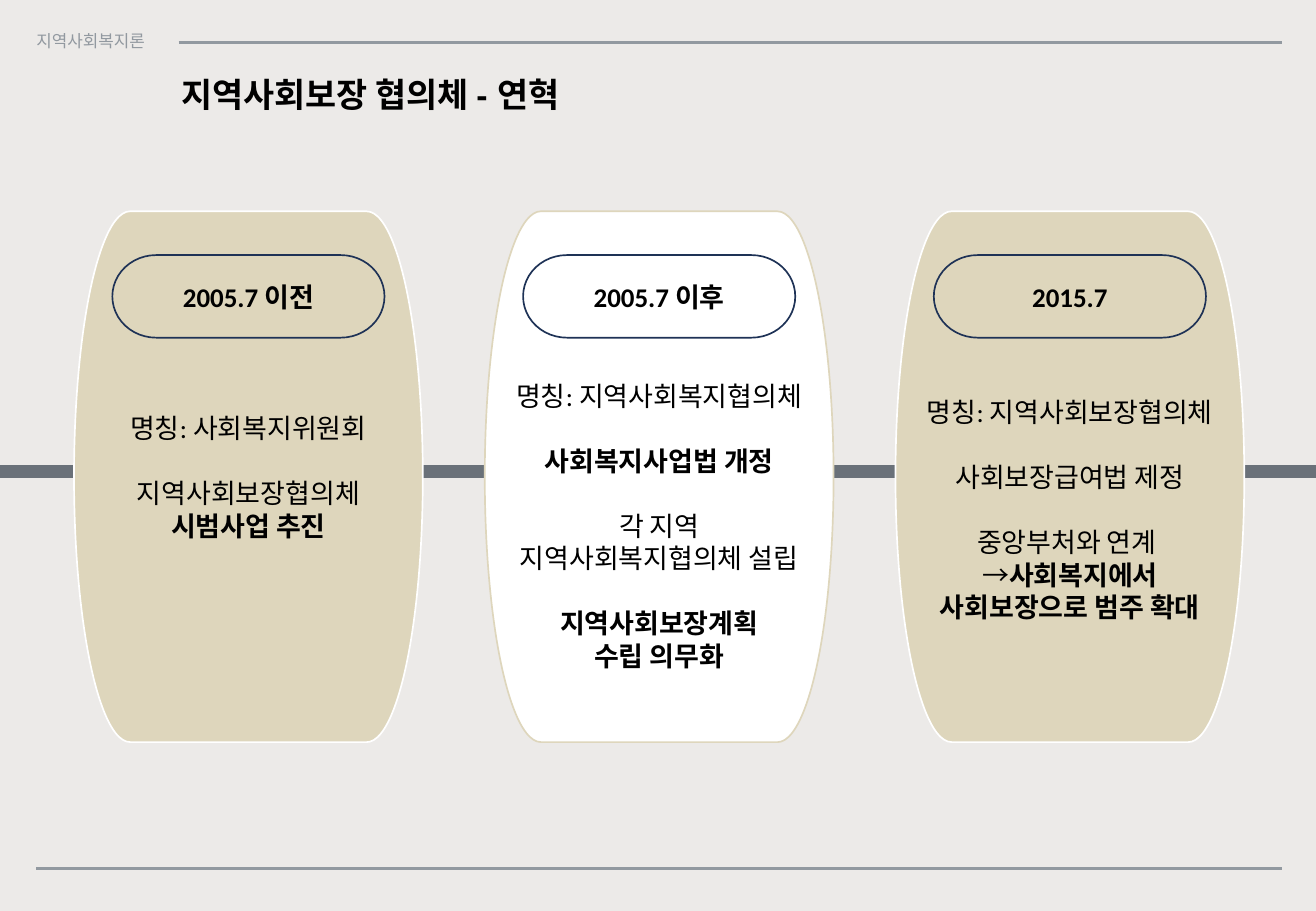
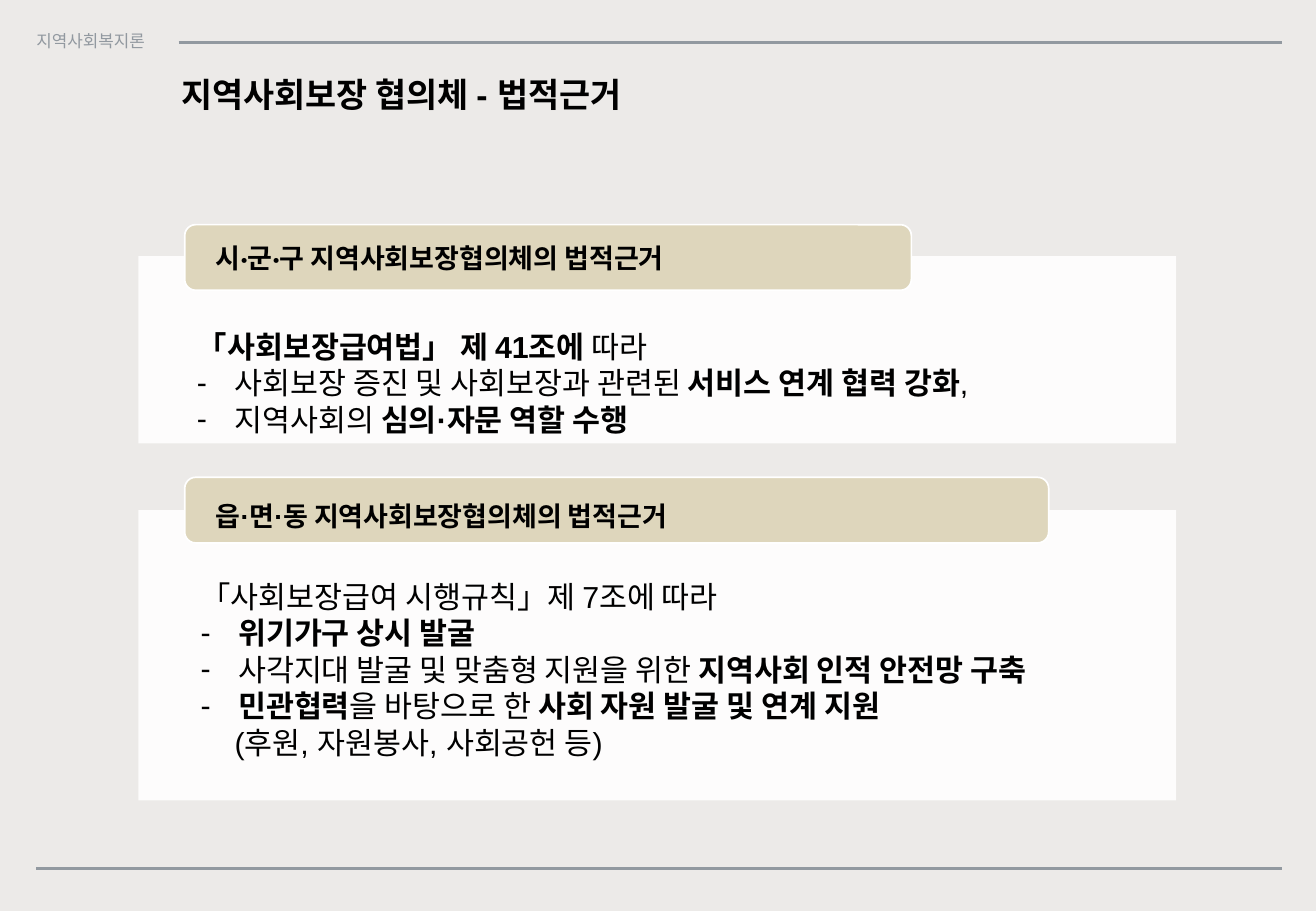
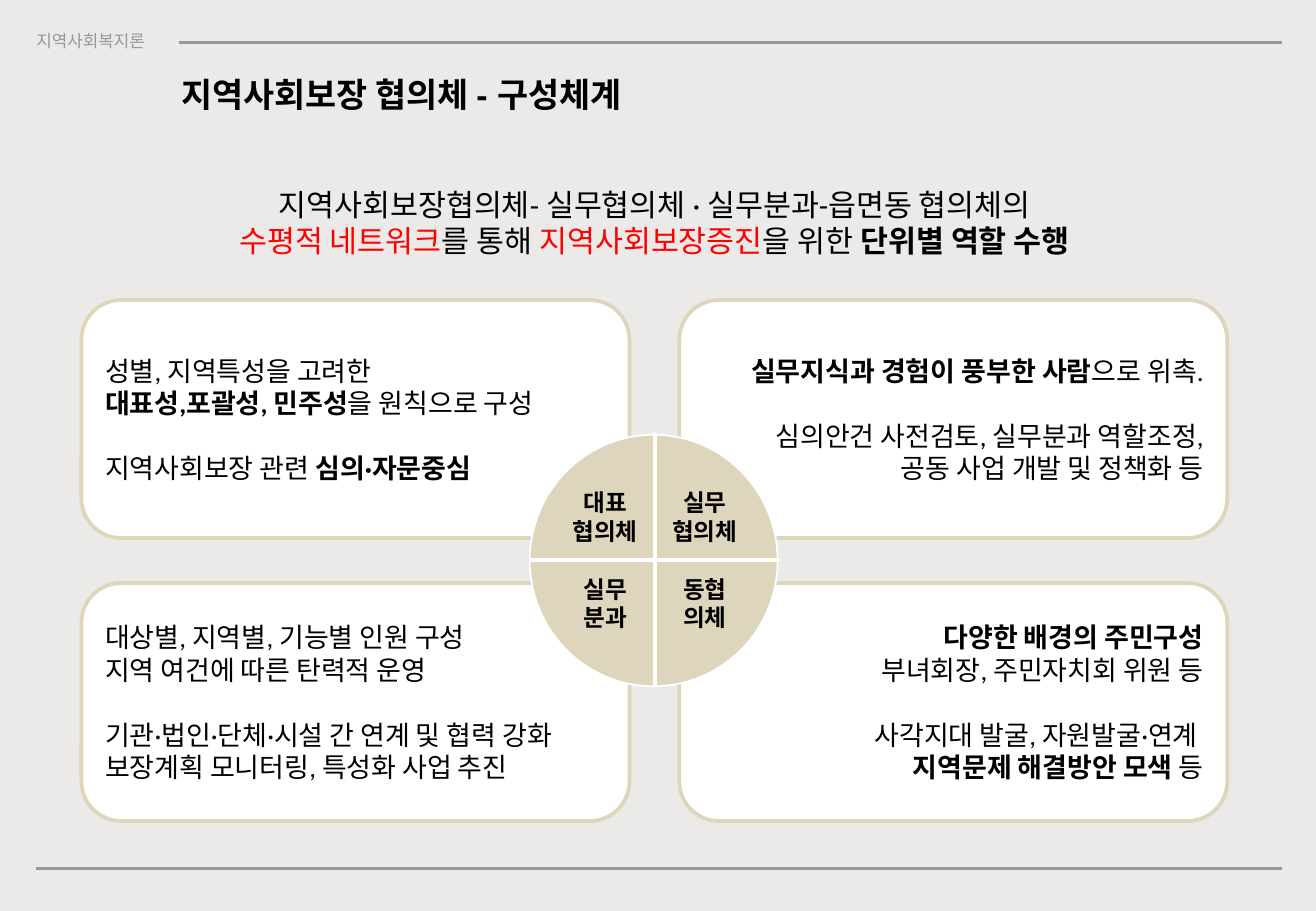
from dataclasses import dataclass

from lxml.etree import SubElement
from pptx import Presentation
from pptx.dml.color import RGBColor
from pptx.enum.shapes import MSO_CONNECTOR, MSO_SHAPE
from pptx.enum.text import MSO_ANCHOR, MSO_AUTO_SIZE, PP_ALIGN
from pptx.oxml.ns import qn
from pptx.util import Inches, Pt


@dataclass(frozen=True)
class Theme:
    paper: str = "ECEAE8"
    rule: str = "9299A0"
    timeline: str = "6A7179"
    sand: str = "DED6BC"
    navy: str = "1E3256"
    white: str = "FFFFFF"
    ink: str = "000000"
    accent: str = "FF0000"
    head_font: str = "Arial"
    body_font: str = "Calibri"
    title_size: int = 20
    lead_size: int = 18
    body_size: int = 16
    label_size: int = 14
    tag_size: int = 10
    line_gap: float = 19.3  # one empty line of body text, in points


THEME = Theme()
WIDTH, HEIGHT = 10.83, 7.5
MARGIN, RIGHT = 0.3, 10.55
TITLE_ONLY, TWO_CONTENT = 5, 3
HANG = 0.31

# In all texts *...* is bold and ~...~ is the accent colour.
# A body is a list of blocks, and a block is a list of paragraphs.
COURSE = "지역사회복지론"

HISTORY = "지역사회보장 협의체 - 연혁"
PERIODS = [  # heading, fill, outline, lines kept free for the heading, body
    ("2005.7 이전", THEME.sand, THEME.white, 0, [
        ["명칭: 사회복지위원회"],
        ["지역사회보장협의체 *시범사업 추진*"]]),
    ("2005.7 이후", THEME.white, THEME.sand, 3, [
        ["명칭: 지역사회복지협의체"],
        ["*사회복지사업법 개정*"],
        ["각 지역 지역사회복지협의체 설립"],
        ["*지역사회보장계획*", "*수립 의무화*"]]),
    ("2015.7", THEME.sand, THEME.white, 2, [
        ["명칭: 지역사회보장협의체"],
        ["사회보장급여법 제정"],
        ["중앙부처와 연계 ", "→*사회복지에서 사회보장으로 범주 확대*"]]),
]

LEGAL = "지역사회보장 협의체 - 법적근거"
GROUNDS = [
    dict(heading="*시·군·구 지역사회보장협의체의 법적근거*", font=THEME.body_font,
         panel=(1.14, 2.11, 8.54, 1.54), tab=(1.52, 1.85, 5.98, 0.54), drop=0,
         list_box=(1.52, 2.65, 7.43, 1.01),
         law="*「사회보장급여법」 제 41조에 *따라",
         points=["사회보장 증진 및 사회보장과 관련된 *서비스 연계 협력 강화*,",
                 "지역사회의 *심의·자문 역할 수행*"],
         note=None),
    dict(heading="*읍·면·동 지역사회보장협의체의 법적근거*", font=THEME.head_font,
         panel=(1.14, 4.2, 8.54, 2.39), tab=(1.52, 3.93, 7.11, 0.54), drop=0.1,
         list_box=(1.55, 4.71, 7.81, 1.62),
         law="「사회보장급여 시행규칙」제 7조에 따라",
         points=["*위기가구 상시 발굴*",
                 "사각지대 발굴 및 맞춤형 지원을 위한 *지역사회 인적 안전망 구축*",
                 "*민관협력*을 바탕으로 한 *사회 자원 발굴 및 연계 지원*"],
         note="(후원, 자원봉사, 사회공헌 등)"),
]

STRUCTURE = "지역사회보장 협의체 - 구성체계"
SUMMARY = [["지역사회보장협의체- 실무협의체 · 실무분과-읍면동 협의체의 ",
            "~수평적 네트워크~를 통해 ~지역사회보장증진~을 위한 *단위별 역할 수행 *"]]
QUADRANTS = [  # row by row: label, body
    (["*대표 협의체*"], [
        ["성별, 지역특성을 고려한", "*대표성,포괄성, 민주성*을 원칙으로 구성"],
        ["지역사회보장 관련 *심의·자문중심*"]]),
    (["*실무 협의체*"], [
        ["*실무지식과 경험이 풍부한 사람*으로 위촉."],
        ["심의안건 사전검토, 실무분과 역할조정,", "공동 사업 개발 및 정책화 등"]]),
    (["*실무*", "*분과*"], [
        ["대상별, 지역별, 기능별 인원 구성", "지역 여건에 따른 탄력적 운영"],
        ["기관·법인·단체·시설 간 연계 및 협력 강화 보장계획 모니터링, 특성화 사업 추진"]]),
    (["*동협*", "*의체*"], [
        ["*다양한 배경의 주민구성*", "부녀회장, 주민자치회 위원 등"],
        ["사각지대 발굴, 자원발굴·연계 ", "*지역문제 해결방안 모색 *등"]]),
]


def color(code):
    return RGBColor.from_string(code)


def place(shape, box):
    shape.left, shape.top, shape.width, shape.height = map(Inches, box)


def write(frame, blocks, size=THEME.body_size, font=THEME.body_font,
          align=PP_ALIGN.LEFT, ink=THEME.ink, anchor=MSO_ANCHOR.TOP):
    """Fill a text frame with blocks of marked-up paragraphs."""
    frame.word_wrap = True
    frame.auto_size = MSO_AUTO_SIZE.NONE
    frame.vertical_anchor = anchor
    lines = [(text, block_no > 0 and line_no == 0)
             for block_no, block in enumerate(blocks)
             for line_no, text in enumerate(block)]
    for number, (text, opens_block) in enumerate(lines):
        para = frame.add_paragraph() if number else frame.paragraphs[0]
        para.alignment = align
        para.space_before = Pt(THEME.line_gap if opens_block else 0)
        para.font.size, para.font.name = Pt(size), font
        para.font.color.rgb = color(ink)
        for bold_no, piece in enumerate(text.split("*")):
            for accent_no, words in enumerate(piece.split("~")):
                if words:
                    span = para.add_run()
                    span.text = words
                    span.font.bold = bold_no % 2 == 1
                    if accent_no % 2:
                        span.font.color.rgb = color(THEME.accent)


def indent(para, left=0.0, bullet=None):
    """Indent a paragraph, hanging it from its bullet if it has one."""
    props = para._p.get_or_add_pPr()
    props.set("marL", str(Inches(left)))
    props.set("indent", str(Inches(-left if bullet else 0)))
    mark = props.makeelement(qn("a:buChar"), {"char": bullet}) if bullet \
        else props.makeelement(qn("a:buNone"), {})
    default_run = props.find(qn("a:defRPr"))
    if default_run is None:
        props.append(mark)
    else:
        default_run.addprevious(mark)


def add_box(page, kind, box, fill=None, outline=None, weight=1.0):
    shape = page.shapes.add_shape(kind, *map(Inches, box))
    shape.shadow.inherit = False
    if fill:
        shape.fill.solid()
        shape.fill.fore_color.rgb = color(fill)
    else:
        shape.fill.background()
    if outline:
        shape.line.color.rgb = color(outline)
        shape.line.width = Pt(weight)
    else:
        shape.line.fill.background()
    return shape


def add_text(page, box, blocks, **style):
    write(page.shapes.add_textbox(*map(Inches, box)).text_frame, blocks, **style)


def add_rule(page, left, right, top, ink, weight):
    rule = page.shapes.add_connector(
        MSO_CONNECTOR.STRAIGHT, *map(Inches, (left, top, right, top)))
    rule.line.color.rgb = color(ink)
    rule.line.width = Pt(weight)
    SubElement(rule.element.spPr, qn("a:effectLst"))
    return rule


def add_page(deck, layout, title):
    page = deck.slides.add_slide(deck.slide_layouts[layout])
    write(page.shapes.title.text_frame, [[f"*{title}*"]],
          size=THEME.title_size, font=THEME.head_font)
    return page


def dress_master(deck, page):
    """Draw the shared frame on a page, then move it to the master."""
    master = deck.slide_master
    master.background.fill.solid()
    master.background.fill.fore_color.rgb = color(THEME.paper)
    place(master.placeholders[0], (1.39, 0.56, 6.5, 0.44))
    tag = add_box(page, MSO_SHAPE.RECTANGLE, (0.12, 0.2, 1.25, 0.27), THEME.paper)
    write(tag.text_frame, [[COURSE]], size=THEME.tag_size,
          align=PP_ALIGN.CENTER, ink=THEME.rule)
    footer = add_rule(page, MARGIN, RIGHT, 7.15, THEME.rule, 1.75)
    header = add_rule(page, 1.47, RIGHT, 0.35, THEME.rule, 2.25)
    for part in (footer, header, tag):
        master.shapes.element.append(part.element)


def fill_history(page):
    add_rule(page, 0, WIDTH, 3.88, THEME.timeline, 8)
    left, top, width, height, pitch = 0.61, 1.74, 2.87, 4.37, 3.38
    pill_width = 2.24
    for column, (heading, fill, outline, free_lines, body) in enumerate(PERIODS):
        x = left + column * pitch
        barrel = add_box(page, MSO_SHAPE.FLOWCHART_TERMINATOR,
                         (x, top, width, height), fill, outline)
        barrel.text_frame.margin_top = Inches(0.05) + Pt(free_lines * THEME.line_gap)
        pill = add_box(page, MSO_SHAPE.FLOWCHART_TERMINATOR,
                       (x + (width - pill_width) / 2, 2.1, pill_width, 0.68),
                       outline=THEME.navy)
        for shape, blocks in ((barrel, body), (pill, [[f"*{heading}*"]])):
            write(shape.text_frame, blocks, align=PP_ALIGN.CENTER,
                  anchor=MSO_ANCHOR.MIDDLE)


def fill_legal(page):
    bodies = list(page.placeholders)[1:]
    for ground, body in zip(GROUNDS, bodies):
        panel = add_box(page, MSO_SHAPE.RECTANGLE, ground["panel"], THEME.white)
        tint = panel.element.spPr.find(qn("a:solidFill"))[0]
        SubElement(tint, qn("a:alpha"), val="90000")

        tab = add_box(page, MSO_SHAPE.ROUNDED_RECTANGLE, ground["tab"],
                      THEME.sand, THEME.white)
        frame = tab.text_frame
        frame.margin_left = frame.margin_right = Inches(0.23)
        frame.margin_top, frame.margin_bottom = Inches(ground["drop"]), 0
        write(frame, [[ground["heading"]]], font=ground["font"],
              anchor=MSO_ANCHOR.MIDDLE)

        place(body, ground["list_box"])
        lines = [(ground["law"], 0, None)]
        lines += [(point, HANG, "-") for point in ground["points"]]
        if ground["note"]:
            lines.append((ground["note"], 0.28, None))
        write(body.text_frame, [[text for text, *_ in lines]],
              size=THEME.lead_size, font=THEME.head_font)
        for para, (_, left, bullet) in zip(body.text_frame.paragraphs, lines):
            indent(para, left, bullet)
        page.shapes.element.append(body.element)  # bring in front of its panel


def fill_structure(page):
    add_text(page, (1.43, 1.48, 7.97, 0.71), SUMMARY,
             size=THEME.lead_size, align=PP_ALIGN.CENTER)
    cells = [(number // 2, number % 2, *quadrant)
             for number, quadrant in enumerate(QUADRANTS)]
    for row, column, _, body in cells:
        card = add_box(page, MSO_SHAPE.ROUNDED_RECTANGLE,
                       (0.67 + column * 4.92, 2.47 + row * 2.33, 4.51, 1.96),
                       THEME.white, THEME.sand, 2.25)
        write(card.text_frame, body, anchor=MSO_ANCHOR.MIDDLE,
              align=PP_ALIGN.RIGHT if column else PP_ALIGN.LEFT)
    add_box(page, MSO_SHAPE.OVAL, (4.36, 3.58, 2.04, 2.07), THEME.sand, THEME.white)
    cross = add_box(page, MSO_SHAPE.MATH_PLUS, (4.01, 3.2, 2.76, 2.82),
                    THEME.white, THEME.white, 2)
    cross.adjustments[0] = 0
    for row, column, label, _ in cells:
        add_text(page, (4.57 + column * 0.82, 3.97 + row * 0.71, 0.82, 0.57),
                 [label], size=THEME.label_size, align=PP_ALIGN.CENTER)


def main():
    deck = Presentation()
    deck.slide_width, deck.slide_height = Inches(WIDTH), Inches(HEIGHT)
    history = add_page(deck, TITLE_ONLY, HISTORY)
    dress_master(deck, history)
    fill_history(history)
    fill_legal(add_page(deck, TWO_CONTENT, LEGAL))
    fill_structure(add_page(deck, TITLE_ONLY, STRUCTURE))
    deck.save("out.pptx")


if __name__ == "__main__":
    main()
